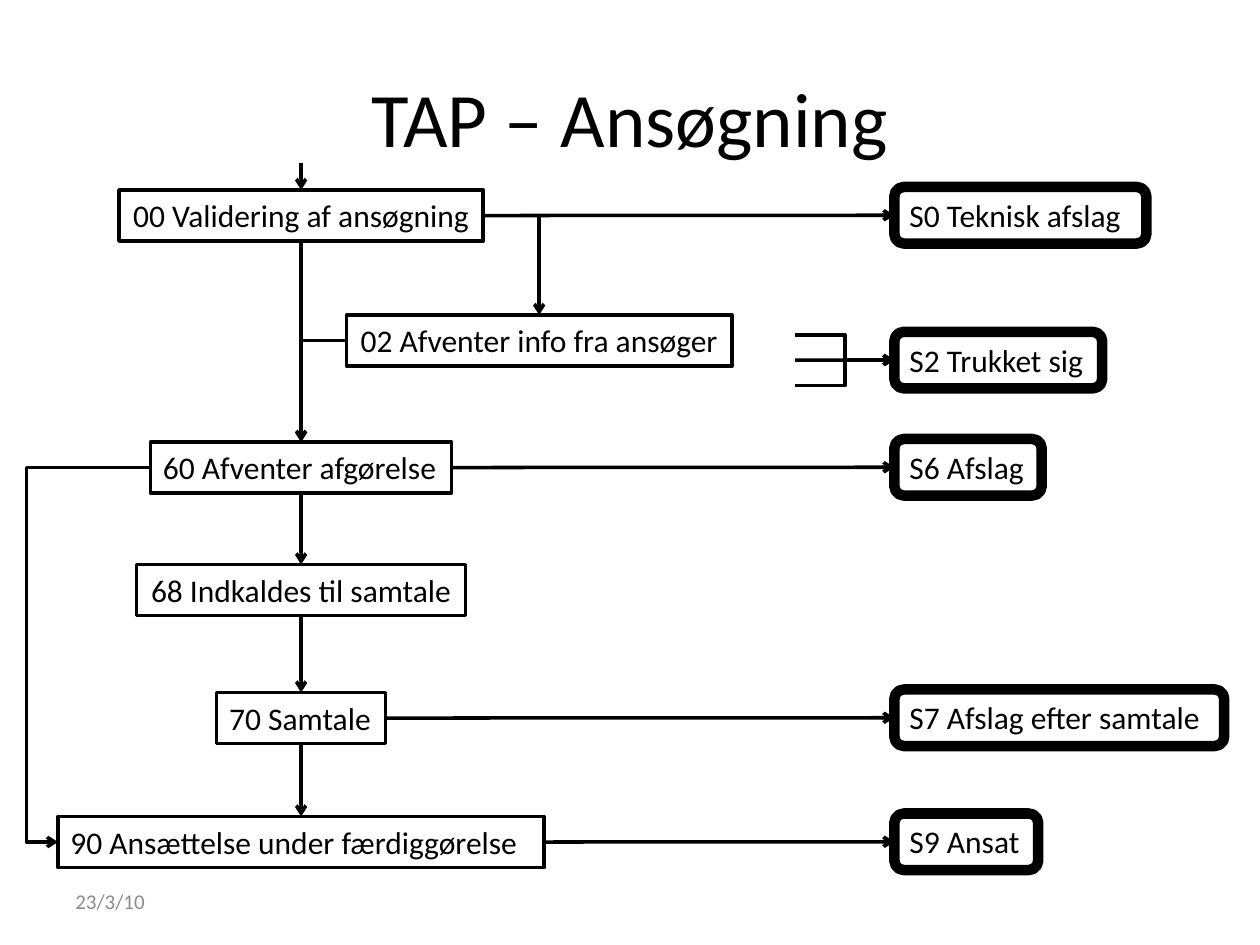
"""Build the job application workflow slide."""
import lxml.etree
import pptx
import pptx.dml.color
import pptx.enum.shapes
import pptx.enum.text
import pptx.oxml.ns
import pptx.util

Cm = pptx.util.Cm
Pt = pptx.util.Pt
qn = pptx.oxml.ns.qn
Kind = pptx.enum.shapes.MSO_SHAPE
Connector = pptx.enum.shapes.MSO_CONNECTOR
Align = pptx.enum.text.PP_ALIGN
Anchor = pptx.enum.text.MSO_ANCHOR
AutoSize = pptx.enum.text.MSO_AUTO_SIZE

BLACK = pptx.dml.color.RGBColor(0x00, 0x00, 0x00)
GREY = pptx.dml.color.RGBColor(0x8C, 0x8C, 0x8C)

TOP, LEFT, BOTTOM, RIGHT = range(4)
MAIN_CENTER = 6.07
OUTCOME_LEFT = 18.03

STEPS = {
    "00": ("00 Validering af ansøgning", MAIN_CENTER, 4.34, 7.34, Align.CENTER, False),
    "02": ("02 Afventer info fra ansøger", 10.87, 6.86, 7.77, Align.CENTER, False),
    "60": ("60 Afventer afgørelse", MAIN_CENTER, 9.42, 6.07, Align.LEFT, False),
    "68": ("68 Indkaldes til samtale", MAIN_CENTER, 11.89, 6.63, Align.CENTER, False),
    "70": ("70 Samtale", MAIN_CENTER, 14.47, 3.4, Align.LEFT, False),
    "90": ("90 Ansættelse under færdiggørelse", MAIN_CENTER, 16.97, 9.8, Align.LEFT, True),
}
OUTCOMES = {
    "S0": ("S0 Teknisk afslag", 4.34, 5.08),
    "S2": ("S2 Trukket sig", 7.26, 4.19),
    "S6": ("S6 Afslag", 9.42, 2.97),
    "S7": ("S7 Afslag efter samtale", 14.47, 6.65),
    "S9": ("S9 Ansat", 16.97, 2.9),
}
MAIN_FLOW = [("00", "60"), ("60", "68"), ("68", "70"), ("70", "90")]
DECISIONS = [("00", "S0"), ("60", "S6"), ("70", "S7"), ("90", "S9")]


class Diagram:
    """Hold the style and the current slide."""

    font_name = "Calibri"
    line_width = Pt(2)

    def __init__(self, slide):
        self.slide = slide

    def apply(self, target, values):
        for name, value in values.items():
            setattr(target, name, value)

    def add_text(self, shape, text, size, color, alignment, frame_values):
        frame = shape.text_frame
        self.apply(frame, frame_values)
        paragraph = frame.paragraphs[0]
        paragraph.alignment = alignment
        run = paragraph.add_run()
        run.text = text
        self.apply(run.font, {"name": self.font_name, "size": Pt(size)})
        run.font.color.rgb = color

    def label(self, text, box, size, color, alignment):
        shape = self.slide.shapes.add_textbox(*map(Cm, box))
        values = {"word_wrap": True, "vertical_anchor": Anchor.MIDDLE}
        self.add_text(shape, text, size, color, alignment, values)

    def node(self, kind, text, box, width, alignment, wrap):
        shape = self.slide.shapes.add_shape(kind, *map(Cm, box))
        shape.shadow.inherit = False
        shape.fill.background()
        shape.line.color.rgb = BLACK
        shape.line.width = width
        values = {"word_wrap": wrap, "auto_size": AutoSize.SHAPE_TO_FIT_TEXT,
                  "vertical_anchor": Anchor.TOP}
        self.add_text(shape, text, 18, BLACK, alignment, values)
        return shape

    def step(self, text, center, middle, width, alignment, wrap):
        box = (center - width / 2, middle - 0.51, width, 1.03)
        return self.node(Kind.FLOWCHART_PROCESS, text, box, self.line_width, alignment, wrap)

    def outcome(self, text, middle, width):
        box = (OUTCOME_LEFT, middle - 0.57, width, 1.14)
        return self.node(Kind.FLOWCHART_ALTERNATE_PROCESS, text, box, Pt(6), Align.LEFT, True)

    def arrow(self, end, start=None, point=(0, 0), geometry="line", bend=None):
        kind = Connector.STRAIGHT if geometry == "line" else Connector.ELBOW
        x, y = map(Cm, point)
        connector = self.slide.shapes.add_connector(kind, x, y, x, y)
        if start:
            connector.begin_connect(*start)
        connector.end_connect(*end)
        connector.line.color.rgb = BLACK
        connector.line.width = self.line_width
        properties = connector.element.spPr
        outline = properties.get_or_add_ln()
        lxml.etree.SubElement(outline, qn("a:tailEnd"), type="arrow")
        lxml.etree.SubElement(properties, qn("a:effectLst"))
        preset = properties.find(qn("a:prstGeom"))
        preset.set("prst", geometry)
        if bend is not None:
            guides = preset.find(qn("a:avLst"))
            lxml.etree.SubElement(guides, qn("a:gd"), name="adj1", fmla=f"val {bend}")


def main():
    presentation = pptx.Presentation()
    presentation.slide_width = Cm(25.4)
    presentation.slide_height = Cm(19.05)
    diagram = Diagram(presentation.slides.add_slide(presentation.slide_layouts[6]))

    diagram.label("TAP – Ansøgning", (1.27, 0.76, 22.86, 3.18), 44, BLACK, Align.CENTER)
    diagram.label("23/3/10", (1.27, 17.65, 5.93, 1.02), 12, GREY, Align.LEFT)

    nodes = {key: diagram.step(*values) for key, values in STEPS.items()}
    nodes.update({key: diagram.outcome(*values) for key, values in OUTCOMES.items()})

    diagram.arrow((nodes["00"], TOP), point=(MAIN_CENTER, 3.28))
    for source, target in MAIN_FLOW:
        diagram.arrow((nodes[target], TOP), (nodes[source], BOTTOM))
    for source, target in DECISIONS:
        diagram.arrow((nodes[target], LEFT), (nodes[source], RIGHT))

    diagram.arrow((nodes["02"], TOP), (nodes["00"], RIGHT), geometry="bentConnector2")
    diagram.arrow((nodes["60"], TOP), (nodes["02"], LEFT), geometry="bentConnector2")
    diagram.arrow((nodes["90"], LEFT), (nodes["60"], LEFT),
                  geometry="bentConnector3", bend=134100)

    for offset in (-0.51, 0, 0.51):
        geometry = "bentConnector3" if offset else "line"
        diagram.arrow((nodes["S2"], LEFT), point=(16.03, 7.26 + offset), geometry=geometry)

    presentation.save("out.pptx")


if __name__ == "__main__":
    main()
